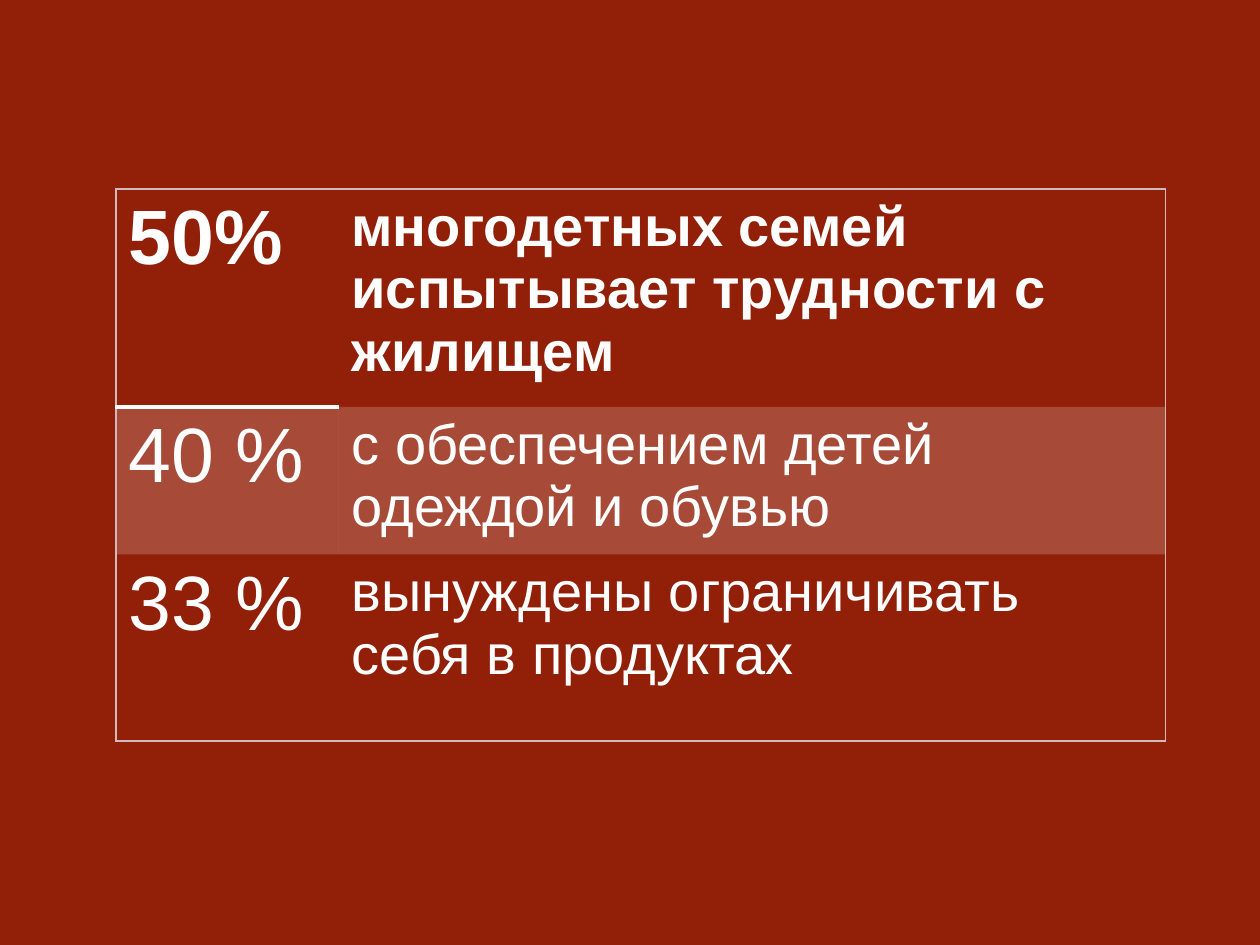
from lxml.etree import SubElement
from pptx import Presentation
from pptx.dml.color import RGBColor
from pptx.oxml.ns import qn
from pptx.util import Inches, Pt

COLORS = {"background": "921F07", "text": "FFFFFF", "band": "FFFFFF",
          "frame": "D0BABA", "rule": "FFFFFF"}
FONT = "Arial"
BAND_OPACITY = 20
COLUMN_WIDTHS = [1.77, 6.56]
ROW_HEIGHTS = [1.73, 1.17, 1.48]
TEXT_SIZES = [44, 32]
DIFFICULTIES = [
    ("50%", "многодетных семей испытывает трудности с жилищем"),
    ("40 %", "с обеспечением детей одеждой и обувью"),
    ("33 %", "вынуждены ограничивать себя в продуктах"),
]


def set_borders(cell, borders):
    """Draw each side as (color, points), or hide it where the value is None."""
    properties = cell._tc.get_or_add_tcPr()
    for side in "LRTB":
        line = SubElement(properties, qn(f"a:ln{side}"))
        if borders[side] is None:
            SubElement(line, qn("a:noFill"))
            continue
        color, points = borders[side]
        line.set("w", str(Pt(points)))
        fill = SubElement(line, qn("a:solidFill"))
        SubElement(fill, qn("a:srgbClr"), val=COLORS[color])


def fill_cell(cell, banded):
    if not banded:
        cell.fill.background()
        return
    cell.fill.solid()
    cell.fill.fore_color.rgb = RGBColor.from_string(COLORS["band"])
    color = cell._tc.tcPr.find(f".//{qn('a:solidFill')}[last()]/{qn('a:srgbClr')}")
    color = cell._tc.tcPr.find(qn("a:solidFill")).find(qn("a:srgbClr"))
    SubElement(color, qn("a:alpha"), val=str(BAND_OPACITY * 1000))


def write_cell(cell, text, size, bold):
    cell.text_frame.text = text
    font = cell.text_frame.paragraphs[0].runs[0].font
    font.name = FONT
    font.size = Pt(size)
    font.bold = bold
    font.color.rgb = RGBColor.from_string(COLORS["text"])


def add_difficulties(slide, left, top, width, height):
    last_row, last_column = len(ROW_HEIGHTS) - 1, len(COLUMN_WIDTHS) - 1
    table = slide.shapes.add_table(last_row + 1, last_column + 1,
                                   left, top, width, height).table
    table.first_row = table.horz_banding = False
    for column, column_width in zip(table.columns, COLUMN_WIDTHS):
        column.width = Inches(column_width)
    for row, row_height in zip(table.rows, ROW_HEIGHTS):
        row.height = Inches(row_height)

    frame, rule = ("frame", 1), ("rule", 3)
    for r, texts in enumerate(DIFFICULTIES):
        for c, text in enumerate(texts):
            cell = table.cell(r, c)
            set_borders(cell, {
                "L": frame if c == 0 else None,
                "R": frame if c == last_column else None,
                "T": frame if r == 0 else rule if (r, c) == (1, 0) else None,
                "B": frame if r == last_row else rule if (r, c) == (0, 0) else None,
            })
            fill_cell(cell, banded=r == 1)
            write_cell(cell, text, TEXT_SIZES[c], bold=r == 0)


def main():
    presentation = Presentation()
    presentation.slide_width, presentation.slide_height = Inches(10), Inches(7.5)
    slide = presentation.slides.add_slide(presentation.slide_layouts[6])
    slide.background.fill.solid()
    slide.background.fill.fore_color.rgb = RGBColor.from_string(COLORS["background"])
    add_difficulties(slide, Inches(0.92), Inches(1.5),
                     Inches(sum(COLUMN_WIDTHS)), Inches(sum(ROW_HEIGHTS)))
    presentation.save("out.pptx")


if __name__ == "__main__":
    main()
